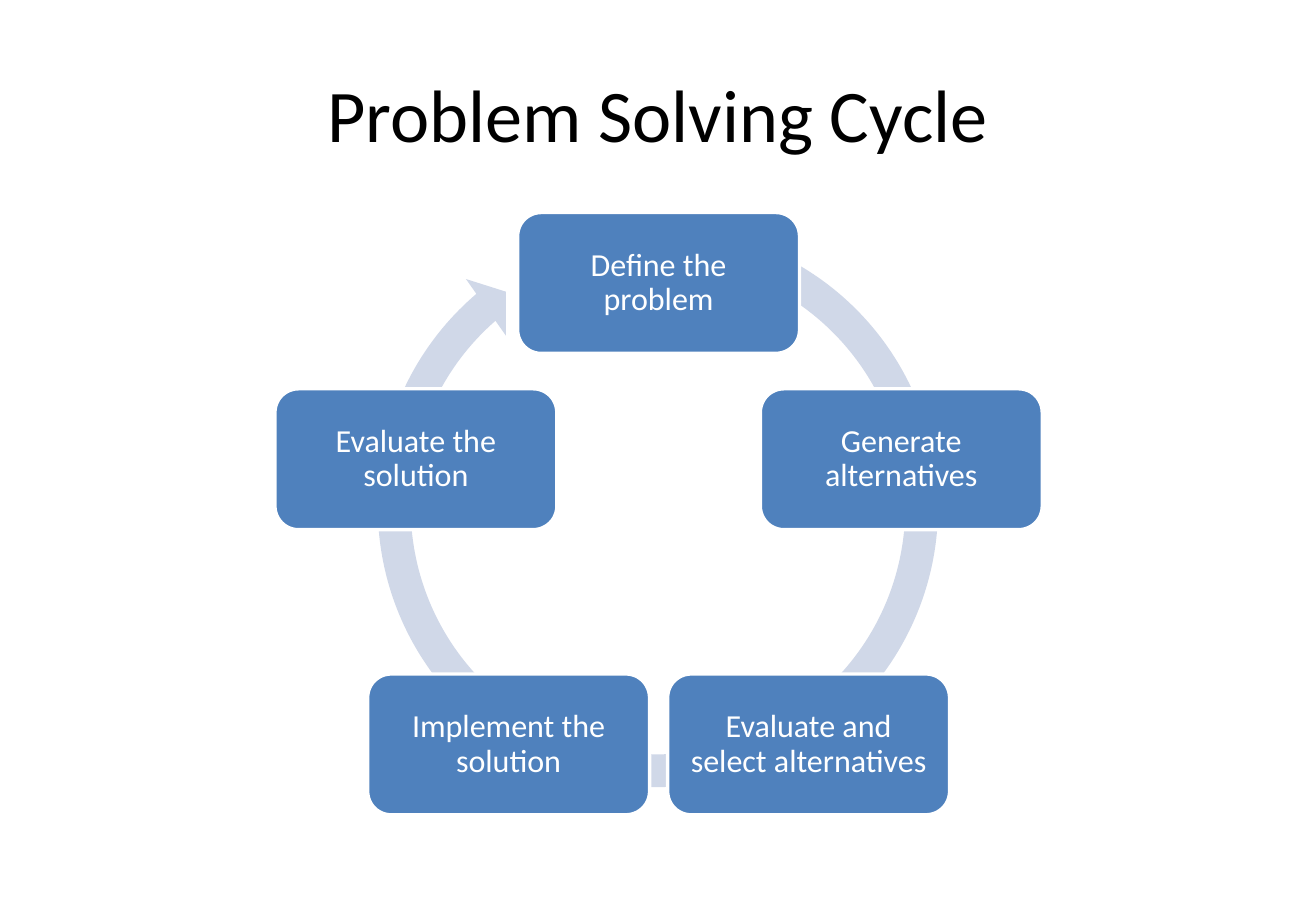
from math import cos, radians, sin

from pptx import Presentation
from pptx.dml.color import RGBColor
from pptx.enum.shapes import MSO_SHAPE as SHAPE
from pptx.enum.text import MSO_ANCHOR as ANCHOR, PP_ALIGN as ALIGN
from pptx.util import Inches, Pt

STEPS = [
    "Define the problem",
    "Generate alternatives",
    "Evaluate and select alternatives",
    "Implement the solution",
    "Evaluate the solution",
]
CENTER_X, CENTER_Y, RADIUS = 5.42, 4.43, 2.1
BOX_W, BOX_H = 2.32, 1.16


def rgb(color):
    return RGBColor.from_string(color)


def write(sp, text, size, color, spacing=1.0, margin=0.1):
    """Fill a shape or text box with one centred paragraph."""
    tf = sp.text_frame
    tf.word_wrap = True
    tf.vertical_anchor = ANCHOR.MIDDLE
    tf.margin_left = tf.margin_right = Inches(margin)
    tf.margin_top = tf.margin_bottom = Inches(margin)
    p = tf.paragraphs[0]
    p.alignment = ALIGN.CENTER
    p.line_spacing = spacing
    r = p.add_run()
    r.text = text
    r.font.name = "Calibri"
    r.font.size = Pt(size)
    r.font.color.rgb = rgb(color)


def add_shape(s, kind, x, y, w, h, fill, line=None):
    sp = s.shapes.add_shape(kind, Inches(x), Inches(y), Inches(w), Inches(h))
    sp.shadow.inherit = False
    sp.fill.solid()
    sp.fill.fore_color.rgb = rgb(fill)
    if line:
        sp.line.color.rgb = rgb(line)
        sp.line.width = Pt(2)
    else:
        sp.line.fill.background()
    return sp


def add_title(s, text):
    sp = s.shapes.add_textbox(Inches(0.54), Inches(0.3), Inches(9.75), Inches(1.25))
    write(sp, text, 44, "000000")


def add_cycle_arrow(s):
    sp = add_shape(s, SHAPE.CIRCULAR_ARROW, 2.96, 1.72, 4.91, 4.91, "D0D8E8")
    # Thickness, head angle, end angle, start angle, head width
    for i, value in enumerate([0.055, 3.31, 137.57, 173.98, 0.058]):
        sp.adjustments[i] = value


def add_step(s, text, angle):
    x = CENTER_X + RADIUS * sin(radians(angle)) - BOX_W / 2
    y = CENTER_Y - RADIUS * cos(radians(angle)) - BOX_H / 2
    sp = add_shape(s, SHAPE.ROUNDED_RECTANGLE, x, y, BOX_W, BOX_H, "4F81BD", "FFFFFF")
    write(sp, text, 19, "FFFFFF", spacing=0.9, margin=0.08)


def main():
    prs = Presentation()
    prs.slide_width, prs.slide_height = Inches(10.83), Inches(7.5)
    s = prs.slides.add_slide(prs.slide_layouts[6])

    add_title(s, "Problem Solving Cycle")

    # Ring behind the steps, then the steps clockwise from the top
    add_cycle_arrow(s)
    for i, step in enumerate(STEPS):
        add_step(s, step, i * 360 / len(STEPS))

    prs.save("out.pptx")


if __name__ == "__main__":
    main()
